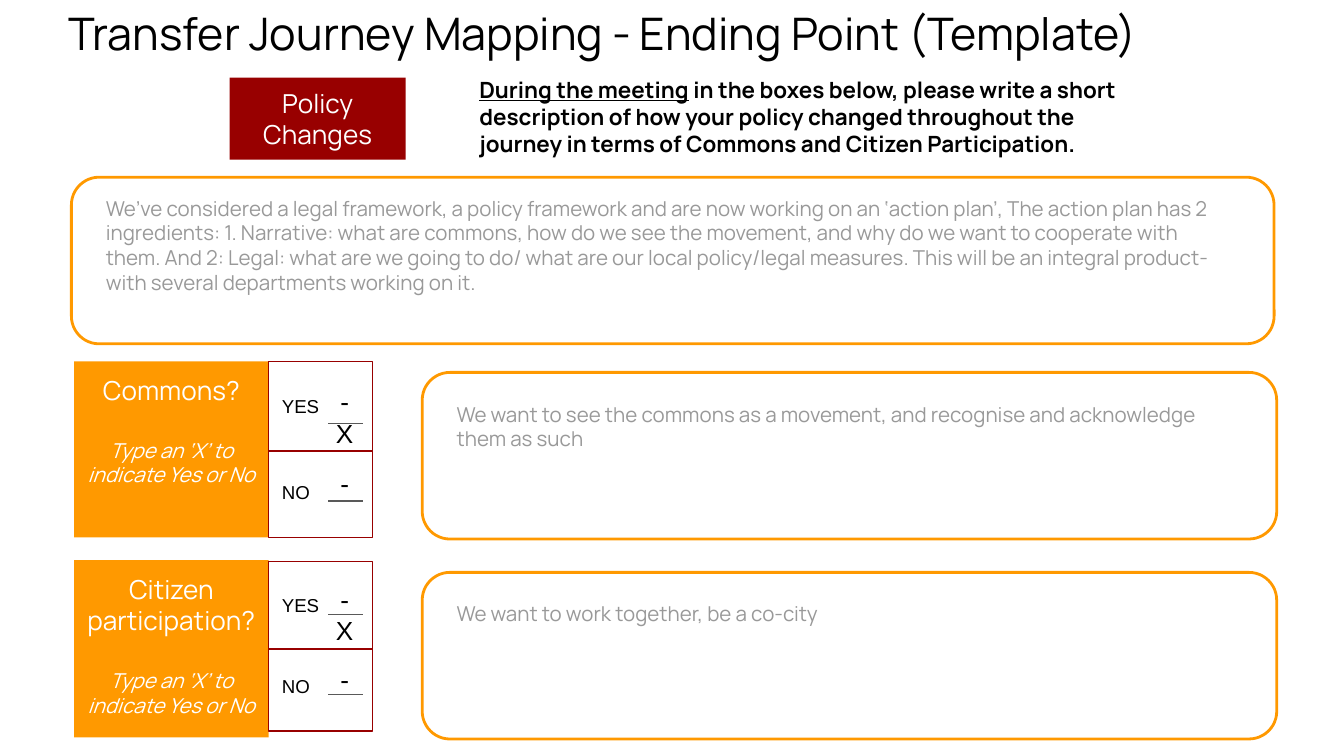
from lxml import etree
from pptx import Presentation
from pptx.dml.color import RGBColor
from pptx.enum import shapes, text
from pptx.oxml.ns import qn
from pptx.util import Cm, Pt

COLORS = {"black": "000000", "white": "FFFFFF", "red": "980000",
          "orange": "FF9900", "answer": "999999", "rule": "595959"}

TITLE = "Transfer Journey Mapping - Ending Point (Template)"
INSTRUCTION = [
    ("During the meeting", True),
    (" in the boxes below, please write a short description of how your policy changed "
     "throughout the journey in terms of Commons and Citizen Participation.", False),
]
POLICY_LABEL = "Policy Changes"
POLICY_ANSWER = (
    "We’ve considered a legal framework, a policy framework and are now working on an "
    "‘action plan’, The action plan has 2 ingredients: 1. Narrative: what are commons, how do "
    "we see the movement, and why do we want to cooperate with them. And 2: Legal: what are we "
    "going to do/ what are our local policy/legal measures. This will be an integral product- "
    "with several departments working on it."
)
HINT = "Type an ‘X’ to indicate Yes or No"
SECTIONS = [
    {"question": "Commons?", "top": 6.83, "height": 3.33, "frame_top": 7.04,
     "answer": "We want to see the commons as a movement, and recognise and acknowledge them as such",
     "choices": [("NO", "-", 8.46, 1.7, 9.47, 8.59), ("YES", "-X", 6.83, 1.7, 8.0, 7.04)]},
    {"question": "Citizen participation?", "top": 10.59, "height": 3.35, "frame_top": 10.82,
     "answer": "We want to work together, be a co-city",
     "choices": [("NO", "-", 12.12, 1.7, 13.13, 12.29), ("YES", "-X", 10.62, 1.65, 11.61, 10.77)]},
]

deck = Presentation()
deck.slide_width, deck.slide_height = Cm(25.4), Cm(14.29)
page = deck.slides.add_slide(deck.slide_layouts[5])


def color(name):
    return RGBColor.from_string(COLORS[name])


def set_frame(box, middle=False):
    frame = box.text_frame
    frame.word_wrap = True
    frame.auto_size = text.MSO_AUTO_SIZE.NONE
    frame.vertical_anchor = text.MSO_ANCHOR.MIDDLE if middle else text.MSO_ANCHOR.TOP
    frame.margin_left = frame.margin_right = Cm(0.25)
    frame.margin_top = frame.margin_bottom = Cm(0.25)
    return frame


def style(para, size, ink, font="Manrope", centered=False, bold=False, italic=False):
    para.alignment = text.PP_ALIGN.CENTER if centered else text.PP_ALIGN.LEFT
    para.font.name, para.font.size = font, Pt(size)
    para.font.bold, para.font.italic = bold, italic
    para.font.color.rgb = color(ink)


def write(box, words, size, ink, middle=False, **options):
    para = set_frame(box, middle).paragraphs[0]
    para.text = words
    style(para, size, ink, **options)


def add_text(area, words, size, ink, **options):
    box = page.shapes.add_textbox(*map(Cm, area))
    write(box, words, size, ink, **options)


def add_block(area, fill=None, line=None, width=0.75, kind=shapes.MSO_SHAPE.RECTANGLE):
    block = page.shapes.add_shape(kind, *map(Cm, area))
    block.shadow.inherit = False
    if fill:
        block.fill.solid()
        block.fill.fore_color.rgb = color(fill)
    else:
        block.fill.background()
    if line:
        block.line.color.rgb = color(line)
        block.line.width = Pt(width)
    else:
        block.line.fill.background()
    return block


def add_answer(frame_area, text_area, words):
    add_block(frame_area, line="orange", width=1.5, kind=shapes.MSO_SHAPE.ROUNDED_RECTANGLE)
    add_text(text_area, words, 11, "answer")


def add_rule(left, right, y):
    rule = page.shapes.add_connector(shapes.MSO_CONNECTOR.STRAIGHT,
                                     Cm(left), Cm(y), Cm(right), Cm(y))
    rule.line.color.rgb = color("rule")
    rule.line.width = Pt(0.75)
    etree.SubElement(rule._element.spPr, qn("a:effectLst"))


def add_section(section):
    top, height = section["top"], section["height"]
    label = add_block((1.4, top, 3.68, height), fill="orange")
    write(label, section["question"], 14, "white", centered=True)
    hint = label.text_frame.add_paragraph()
    hint.text = HINT
    style(hint, 11, "white", centered=True, italic=True)
    hint.space_before = Pt(17)

    for name, mark, cell_top, cell_height, rule_y, mark_top in section["choices"]:
        cell = add_block((5.08, cell_top, 1.96, cell_height), fill="white", line="red")
        write(cell, name, 10, "black", middle=True, font="Arial")
        add_rule(6.2, 6.86, rule_y)
        add_text((6.02, mark_top, 0.99, 1.22), mark, 14, "black", font="Arial", centered=True)

    frame_top = section["frame_top"]
    add_answer((7.98, frame_top, 16.15, 3.15), (8.38, frame_top + 0.3, 15.24, 2.69),
               section["answer"])


title = page.shapes.title
title.left, title.top, title.width, title.height = map(Cm, (1.04, -0.15, 23.19, 1.91))
write(title, TITLE, 24, "black")

instruction = page.shapes.add_textbox(*map(Cm, (8.81, 1.19, 12.9, 1.91)))
para = set_frame(instruction).paragraphs[0]
style(para, 12, "black", bold=True)
for words, underlined in INSTRUCTION:
    span = para.add_run()
    span.text = words
    span.font.underline = underlined

policy = add_block((4.34, 1.47, 3.33, 1.55), fill="red")
write(policy, POLICY_LABEL, 14, "white", middle=True, centered=True)
add_answer((1.35, 3.35, 22.73, 3.15), (1.75, 3.45, 21.79, 2.82), POLICY_ANSWER)

for section in SECTIONS:
    add_section(section)

deck.save("out.pptx")
